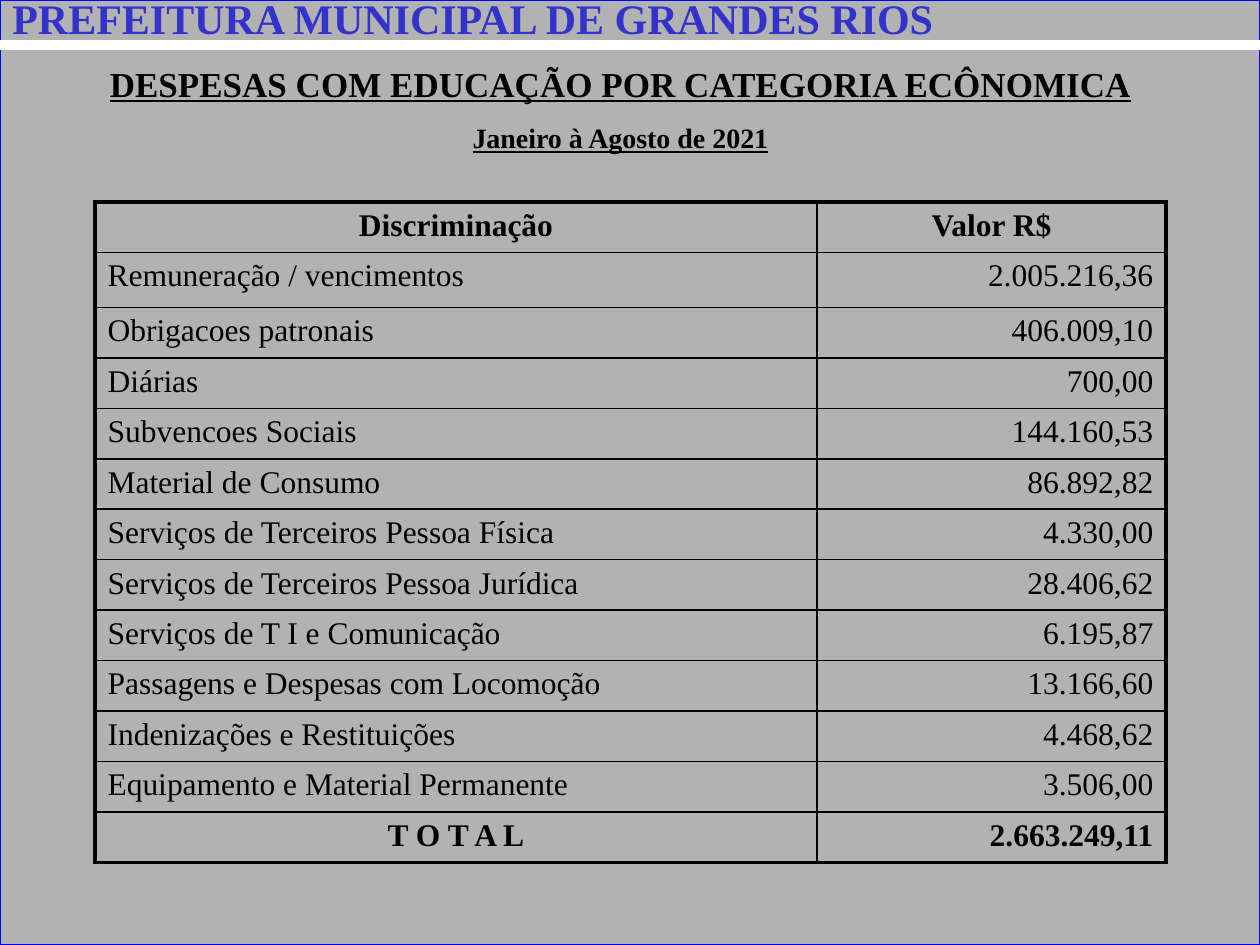
from dataclasses import dataclass

from lxml import etree
from pptx import Presentation
from pptx.dml.color import RGBColor
from pptx.enum.shapes import MSO_CONNECTOR, MSO_SHAPE
from pptx.enum.text import PP_ALIGN
from pptx.oxml.ns import qn
from pptx.util import Emu, Pt


@dataclass(frozen=True)
class Theme:
    font: str = "Times New Roman"
    background: str = "B2B2B2"
    frame: str = "0000FF"
    rule: str = "FFFFFF"
    banner: str = "3333CC"
    shadow: str = "808080"
    ink: str = "000000"
    banner_size: int = 24
    heading_size: int = 20
    period_size: int = 16
    table_size: int = 18
    outer_border: float = 2.25
    inner_border: float = 1


THEME = Theme()
SLIDE_W, SLIDE_H = 1260, 945
TABLE_H, COLUMNS = 659, (722, 349)
FIRST_EXPENSE_H = 55

EXPENSES = [
    ("Remuneração / vencimentos", "2.005.216,36"),
    ("Obrigacoes patronais", "406.009,10"),
    ("Diárias", "700,00"),
    ("Subvencoes Sociais", "144.160,53"),
    ("Material de Consumo", "86.892,82"),
    ("Serviços de Terceiros Pessoa Física", "4.330,00"),
    ("Serviços de Terceiros Pessoa Jurídica", "28.406,62"),
    ("Serviços de T I e Comunicação", "6.195,87"),
    ("Passagens e Despesas com Locomoção", "13.166,60"),
    ("Indenizações e Restituições", "4.468,62"),
    ("Equipamento e Material Permanente", "3.506,00"),
]
ROWS = [("Discriminação", "Valor R$"), *EXPENSES, ("T O T A L", "2.663.249,11")]


def px(length):
    return Emu(round(length * 914400 / 126))


def color(code):
    return RGBColor.from_string(code)


def write(paragraph, text, size, ink=THEME.ink, bold=True, underline=None,
          align=PP_ALIGN.LEFT):
    run = paragraph.add_run()
    run.text = text
    paragraph.alignment = align
    font = paragraph.font
    font.name, font.size = THEME.font, Pt(size)
    font.bold, font.underline = bold, underline
    font.color.rgb = color(ink)
    return run


def add_text_frame(slide, left, top, width, height):
    frame = slide.shapes.add_textbox(px(left), px(top), px(width), px(height)).text_frame
    frame.word_wrap = True
    return frame


def add_background(slide):
    panel = slide.shapes.add_shape(MSO_SHAPE.RECTANGLE, 0, 0, px(SLIDE_W), px(SLIDE_H))
    panel.shadow.inherit = False
    panel.fill.solid()
    panel.fill.fore_color.rgb = color(THEME.background)
    panel.line.color.rgb = color(THEME.frame)
    panel.line.width = Pt(0.75)


def add_rule(slide, y):
    rule = slide.shapes.add_connector(MSO_CONNECTOR.STRAIGHT, 0, px(y), px(SLIDE_W), px(y))
    rule.line.color.rgb = color(THEME.rule)
    rule.line.width = Pt(6)
    etree.SubElement(rule._element.spPr, qn("a:effectLst"))


def add_headings(slide):
    frame = add_text_frame(slide, 15, 35, 1211, 205)
    headings = [
        ("DESPESAS COM EDUCAÇÃO POR CATEGORIA ECÔNOMICA", THEME.heading_size),
        ("Janeiro à Agosto de 2021", THEME.period_size),
    ]
    for index, (text, size) in enumerate(headings):
        paragraph = frame.add_paragraph() if index else frame.paragraphs[0]
        write(paragraph, text, size, underline=True, align=PP_ALIGN.CENTER)
        paragraph.line_spacing = 1.5


def add_banner(slide):
    frame = add_text_frame(slide, 0, -14, 1196, 63)
    paragraph = frame.paragraphs[0]
    run = write(paragraph, "PREFEITURA MUNICIPAL DE GRANDES RIOS",
                THEME.banner_size, THEME.banner)
    paragraph.space_before = Pt(2)
    # Text shadow
    effects = etree.SubElement(run.font._element, qn("a:effectLst"))
    shadow = etree.SubElement(effects, qn("a:outerShdw"), dist="35921", dir="2700000")
    etree.SubElement(shadow, qn("a:srgbClr"), val=THEME.shadow)


def set_borders(cell, outer_sides):
    properties = cell._tc.get_or_add_tcPr()
    for position, side in enumerate("LRTB"):
        width = THEME.outer_border if side in outer_sides else THEME.inner_border
        border = etree.Element(qn(f"a:ln{side}"), w=str(Pt(width)))
        fill = etree.SubElement(border, qn("a:solidFill"))
        etree.SubElement(fill, qn("a:srgbClr"), val=THEME.ink)
        properties.insert(position, border)


def add_expense_table(slide):
    last = len(ROWS) - 1
    table = slide.shapes.add_table(len(ROWS), len(COLUMNS), px(95), px(202),
                                   px(sum(COLUMNS)), px(TABLE_H)).table
    for column, width in zip(table.columns, COLUMNS):
        column.width = px(width)
    for row_index, row in enumerate(ROWS):
        height = FIRST_EXPENSE_H if row_index == 1 else (TABLE_H - FIRST_EXPENSE_H) / last
        table.rows[row_index].height = px(height)
        strong = row_index in (0, last)
        for column_index, text in enumerate(row):
            cell = table.cell(row_index, column_index)
            cell.fill.background()
            if row_index == 0 or (strong and column_index == 0):
                align = PP_ALIGN.CENTER
            else:
                align = PP_ALIGN.RIGHT if column_index else PP_ALIGN.LEFT
            write(cell.text_frame.paragraphs[0], text, THEME.table_size,
                  bold=strong, align=align)
            vertical = {0: "T", last: "B"}.get(row_index, "")
            set_borders(cell, "LR"[column_index] + vertical)


def main():
    presentation = Presentation()
    presentation.slide_width, presentation.slide_height = px(SLIDE_W), px(SLIDE_H)
    slide = presentation.slides.add_slide(presentation.slide_layouts[6])
    add_background(slide)
    add_rule(slide, 45)
    add_headings(slide)
    add_banner(slide)
    add_expense_table(slide)
    presentation.save("out.pptx")


if __name__ == "__main__":
    main()
